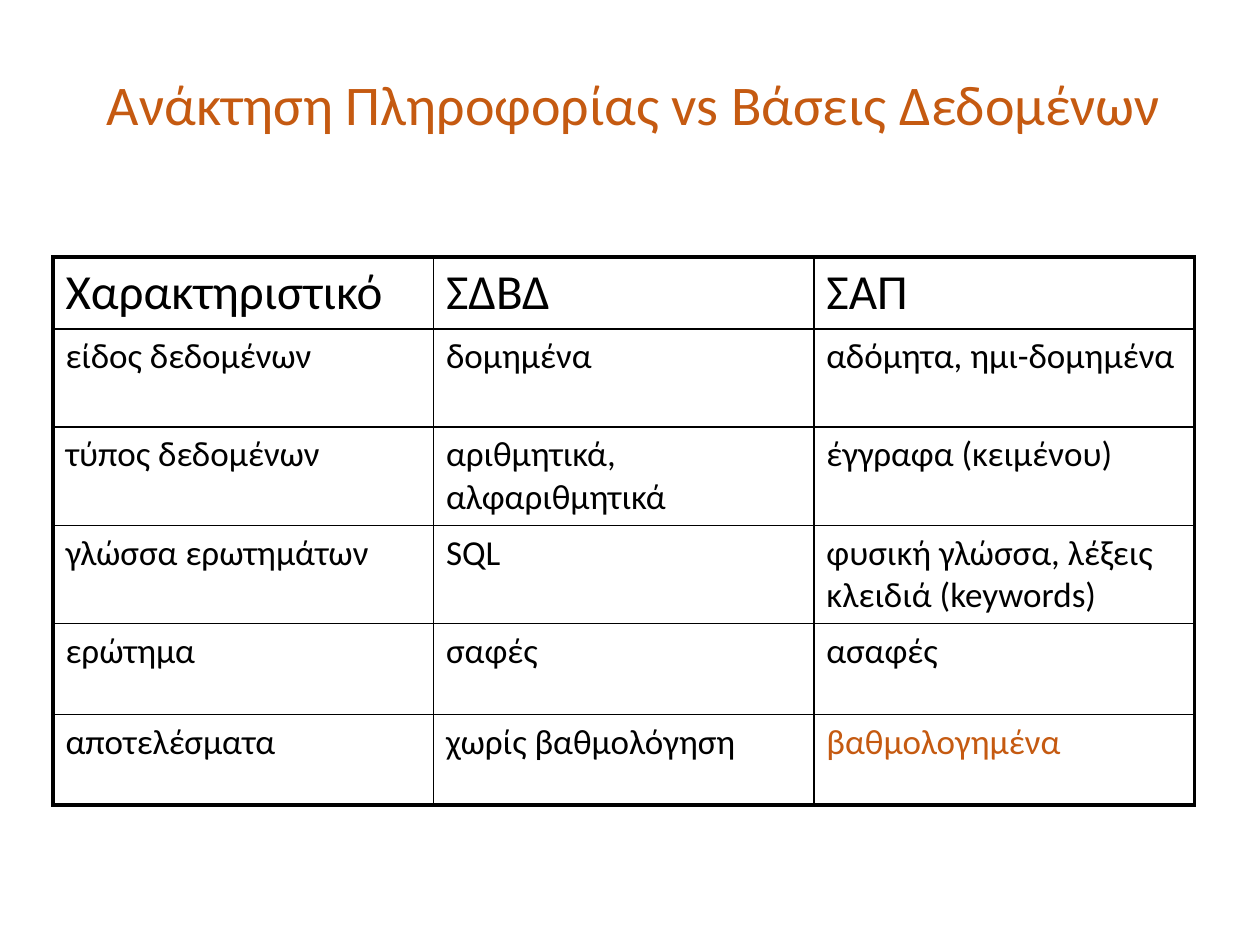
from lxml import etree
from pptx import Presentation
from pptx.dml.color import RGBColor
from pptx.enum.text import MSO_ANCHOR
from pptx.oxml.ns import qn
from pptx.util import Inches, Pt

MIDDLE = MSO_ANCHOR.MIDDLE
FONT = "Calibri"
BLACK = "000000"
ORANGE = "C55A11"
THIN = 1
THICK = 2.25
COLUMN_WIDTH = 3.02
ROW_HEIGHTS = [0.57, 0.78, 0.78, 0.78, 0.72, 0.72]
ROWS = [
    ["Χαρακτηριστικό", "ΣΔΒΔ", "ΣΑΠ"],
    ["είδος δεδομένων", "δομημένα", "αδόμητα, ημι-δομημένα"],
    ["τύπος δεδομένων", "αριθμητικά, αλφαριθμητικά", "έγγραφα (κειμένου)"],
    ["γλώσσα ερωτημάτων", "SQL", "φυσική γλώσσα, λέξεις κλειδιά (keywords)"],
    ["ερώτημα", "σαφές", "ασαφές"],
    ["αποτελέσματα", "χωρίς βαθμολόγηση", "βαθμολογημένα"],
]
HIGHLIGHT = "βαθμολογημένα"


def color(value):
    return RGBColor.from_string(value)


def set_font(paragraph, size, value):
    paragraph.font.name = FONT
    paragraph.font.size = Pt(size)
    paragraph.font.color.rgb = color(value)


def add_title(slide, text):
    title = slide.shapes.add_textbox(Inches(0.75), Inches(0.13), Inches(8.62), Inches(1.45))
    frame = title.text_frame
    frame.word_wrap = True
    frame.vertical_anchor = MIDDLE
    paragraph = frame.paragraphs[0]
    paragraph.text = text
    paragraph.line_spacing = 0.9
    set_font(paragraph, 32, ORANGE)


def set_borders(cell, widths):
    properties = cell._tc.get_or_add_tcPr()
    for position, (side, width) in enumerate(widths.items()):
        line = etree.Element(qn(f"a:ln{side}"), w=str(Pt(width)))
        fill = etree.SubElement(line, qn("a:solidFill"))
        etree.SubElement(fill, qn("a:srgbClr"), val=BLACK)
        properties.insert(position, line)


def add_comparison_table(slide, rows):
    last_row, last_column = len(rows) - 1, len(rows[0]) - 1
    table = slide.shapes.add_table(
        len(rows), len(rows[0]), Inches(0.42), Inches(2.04),
        Inches(COLUMN_WIDTH * len(rows[0])), Inches(sum(ROW_HEIGHTS)),
    ).table
    table.first_row = False
    table.horz_banding = False
    for column in table.columns:
        column.width = Inches(COLUMN_WIDTH)
    for row_index, texts in enumerate(rows):
        table.rows[row_index].height = Inches(ROW_HEIGHTS[row_index])
        for column_index, text in enumerate(texts):
            cell = table.cell(row_index, column_index)
            cell.text = text
            cell.fill.background()
            set_font(
                cell.text_frame.paragraphs[0],
                28 if row_index == 0 else 20,
                ORANGE if text == HIGHLIGHT else BLACK,
            )
            set_borders(cell, {
                "L": THICK if column_index == 0 else THIN,
                "R": THICK if column_index == last_column else THIN,
                "T": THICK if row_index == 0 else THIN,
                "B": THICK if row_index == last_row else THIN,
            })


def main():
    presentation = Presentation()
    presentation.slide_width = Inches(10)
    presentation.slide_height = Inches(7.5)
    slide = presentation.slides.add_slide(presentation.slide_layouts[6])
    add_title(slide, "Ανάκτηση Πληροφορίας vs Βάσεις Δεδομένων")
    add_comparison_table(slide, ROWS)
    presentation.save("out.pptx")


if __name__ == "__main__":
    main()
